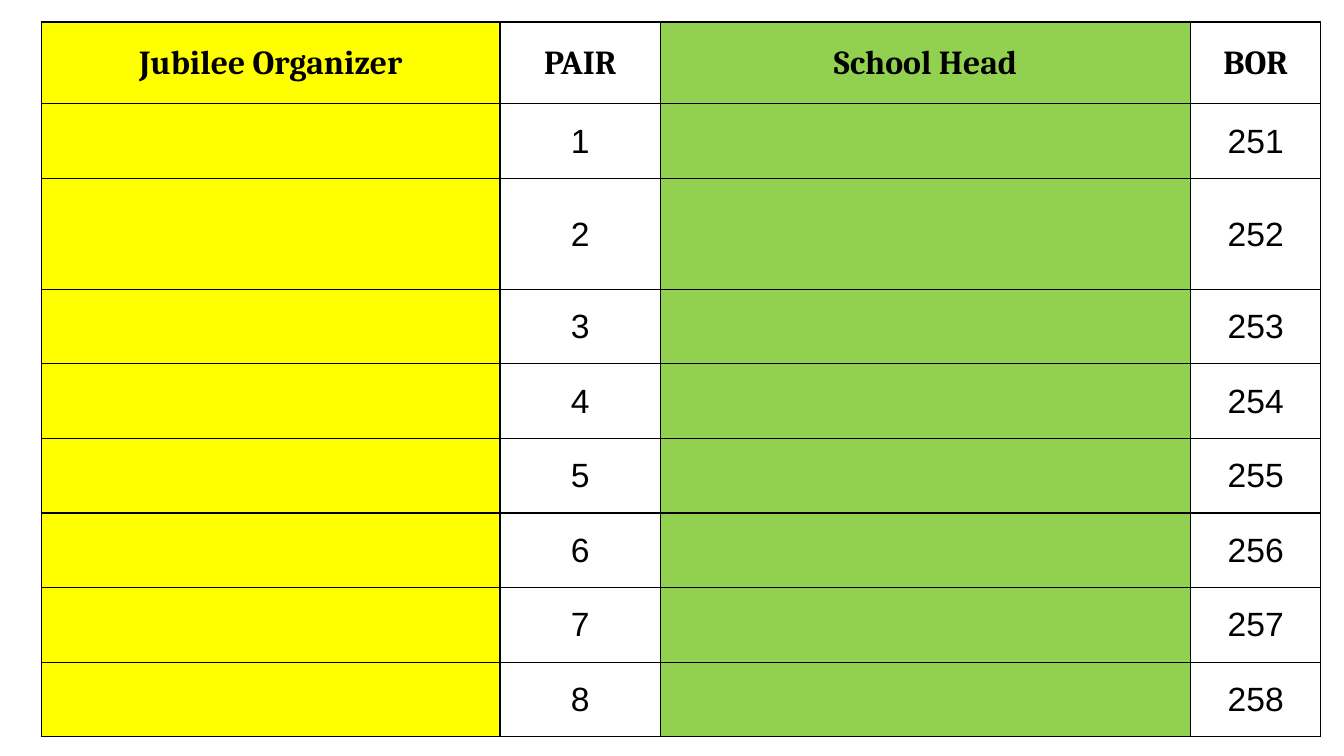
from lxml.etree import SubElement, Element
from pptx import Presentation
from pptx.dml.color import RGBColor
from pptx.enum.text import MSO_ANCHOR, PP_ALIGN
from pptx.oxml.ns import qn
from pptx.util import Inches, Pt

# Content
HEADINGS = ["Jubilee Organizer", "PAIR", "School Head", "BOR"]
FIRST_BOR = 251
PAIR_COUNT = 8
pairs = [["", str(n + 1), "", str(FIRST_BOR + n)] for n in range(PAIR_COUNT)]
entries = [HEADINGS] + pairs

# Look
COLORS = {"organizer": "FFFF00", "plain": "FFFFFF", "head": "92D050", "ink": "000000"}
COLUMN_FILLS = ["organizer", "plain", "head", "plain"]
TEXT_SIZE = 24

# Grid, in inches
LEFT, TOP = 0.41, 0.22
COLUMN_WIDTHS = [4.55, 1.59, 5.26, 1.29]
HEADING_HEIGHT, PAIR_HEIGHT, TALL_HEIGHT = 0.81, 0.74, 1.1
row_heights = [HEADING_HEIGHT] + [PAIR_HEIGHT] * PAIR_COUNT
row_heights[2] = TALL_HEIGHT


def draw_borders(cell, top_width):
    """Give the cell a solid line on each side; lines precede the fill in XML."""
    properties = cell._tc.get_or_add_tcPr()
    widths = {"a:lnL": 1, "a:lnR": 1, "a:lnT": top_width, "a:lnB": 1}
    for position, (side, width) in enumerate(widths.items()):
        line = Element(qn(side), w=str(Pt(width)))
        fill = SubElement(line, qn("a:solidFill"))
        SubElement(fill, qn("a:srgbClr"), val=COLORS["ink"])
        properties.insert(position, line)


def write_entry(cell, entry, is_heading):
    cell.vertical_anchor = MSO_ANCHOR.MIDDLE
    cell.margin_left = cell.margin_right = cell.margin_top = Inches(0.01)
    cell.margin_bottom = 0
    paragraph = cell.text_frame.paragraphs[0]
    paragraph.text = entry
    paragraph.alignment = PP_ALIGN.CENTER
    font = paragraph.font if not entry else paragraph.runs[0].font
    font.size = Pt(TEXT_SIZE)
    font.name = "Cambria" if is_heading else "Arial"
    font.bold = is_heading
    font.color.rgb = RGBColor.from_string(COLORS["ink"])


# Slide
deck = Presentation()
deck.slide_width, deck.slide_height = Inches(13.33), Inches(7.5)
slide = deck.slides.add_slide(deck.slide_layouts[6])

# Pairing table
pairing = slide.shapes.add_table(
    len(entries), len(HEADINGS), Inches(LEFT), Inches(TOP),
    Inches(sum(COLUMN_WIDTHS)), Inches(sum(row_heights))).table
pairing.horz_banding = False
for column, width in zip(pairing.columns, COLUMN_WIDTHS):
    column.width = Inches(width)
for row, height in zip(pairing.rows, row_heights):
    row.height = Inches(height)

for r, row_entries in enumerate(entries):
    for c, entry in enumerate(row_entries):
        cell = pairing.cell(r, c)
        cell.fill.solid()
        cell.fill.fore_color.rgb = RGBColor.from_string(COLORS[COLUMN_FILLS[c]])
        draw_borders(cell, top_width=1.5 if r == 0 else 1)
        if entry:
            write_entry(cell, entry, is_heading=r == 0)

deck.save("out.pptx")
